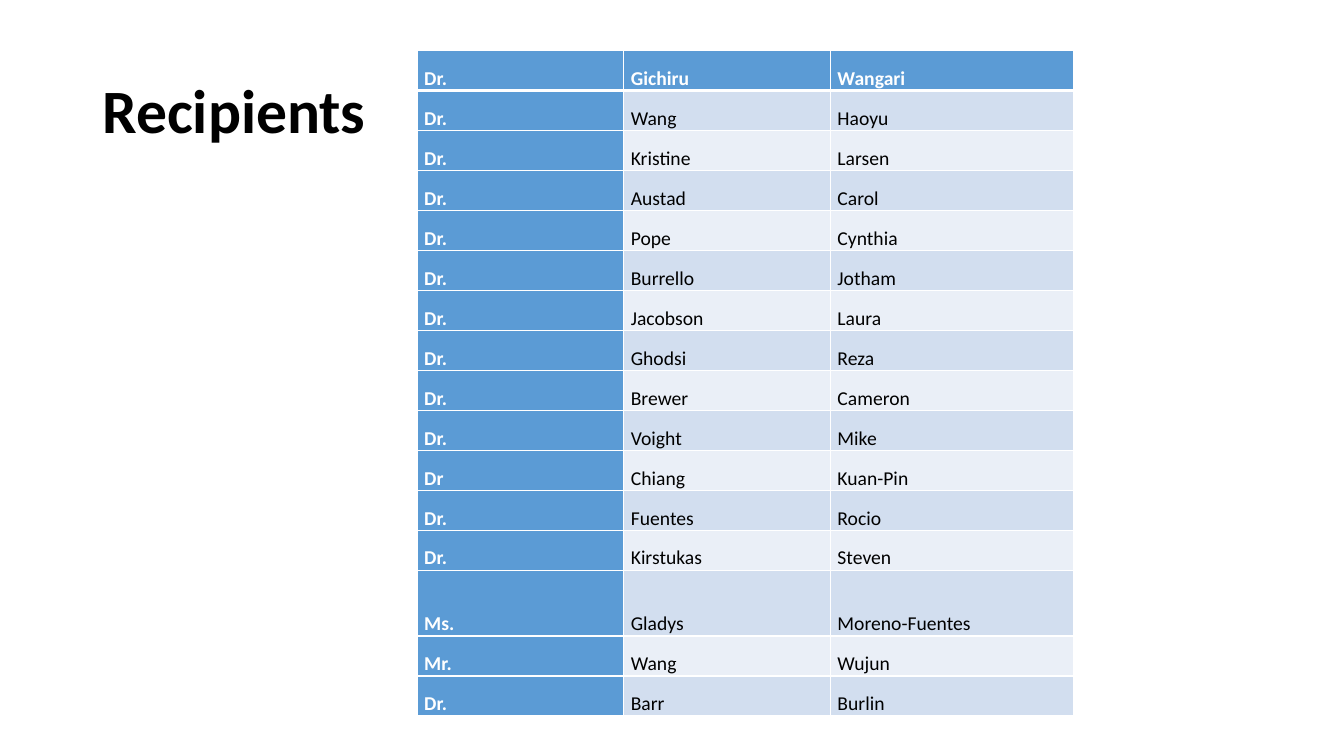
from dataclasses import dataclass

from lxml.etree import SubElement
from pptx import Presentation
from pptx.dml.color import RGBColor
from pptx.enum.text import MSO_ANCHOR, PP_ALIGN
from pptx.oxml.ns import qn
from pptx.util import Pt

# Content
TITLE = "Recipients"
PEOPLE = [
    ("Dr.", "Gichiru", "Wangari"),
    ("Dr.", "Wang", "Haoyu"),
    ("Dr.", "Kristine", "Larsen"),
    ("Dr.", "Austad", "Carol"),
    ("Dr.", "Pope", "Cynthia"),
    ("Dr.", "Burrello", "Jotham"),
    ("Dr.", "Jacobson", "Laura"),
    ("Dr.", "Ghodsi", "Reza"),
    ("Dr.", "Brewer", "Cameron"),
    ("Dr.", "Voight", "Mike"),
    ("Dr", "Chiang", "Kuan-Pin"),
    ("Dr.", "Fuentes", "Rocio"),
    ("Dr.", "Kirstukas", "Steven"),
    ("Ms.", "Gladys", "Moreno-Fuentes"),
    ("Mr.", "Wang", "Wujun"),
    ("Dr.", "Barr", "Burlin"),
]


@dataclass(frozen=True)
class Theme:
    font: str = "Calibri"
    title: int = 44
    body: int = 14
    ink: str = "000000"
    paper: str = "FFFFFF"
    accent: str = "5B9BD5"
    bands: tuple = ("EAEFF7", "D2DEEF")


THEME = Theme()

# Layout in points
TABLE_LEFT, TABLE_TOP = 298, 36.2
WIDTHS = (147.6, 147.6, 173.5)
ROW, TALL = 28.55, 47
TALL_NAME = "Gladys"
INSET = 5
THIN, THICK = 1, 3


def write(frame, text, size=THEME.body, color=THEME.ink, bold=False, spacing=None):
    para = frame.paragraphs[0]
    para.alignment = PP_ALIGN.LEFT
    para.line_spacing = spacing
    run = para.add_run()
    run.text = text
    font = run.font
    font.name, font.size, font.bold = THEME.font, Pt(size), bold
    font.color.rgb = RGBColor.from_string(color)


def border(cell, top, bottom):
    props = cell._tc.get_or_add_tcPr()
    for side, width in (("L", THIN), ("R", THIN), ("T", top), ("B", bottom)):
        line = SubElement(props, qn(f"a:ln{side}"), w=str(Pt(width)))
        fill = SubElement(line, qn("a:solidFill"))
        SubElement(fill, qn("a:srgbClr"), val=THEME.paper)


deck = Presentation()
deck.slide_width, deck.slide_height = Pt(960), Pt(540)
slide = deck.slides.add_slide(deck.slide_layouts[5])

# Title
title = slide.shapes.title
title.left, title.top, title.width, title.height = Pt(66), Pt(28.75), Pt(828), Pt(104.4)
title.text_frame.vertical_anchor = MSO_ANCHOR.MIDDLE
write(title.text_frame, TITLE, size=THEME.title, bold=True, spacing=0.9)

# Table of recipients
heights = [TALL if row[1] == TALL_NAME else ROW for row in PEOPLE]
table = slide.shapes.add_table(
    len(PEOPLE), len(WIDTHS), Pt(TABLE_LEFT), Pt(TABLE_TOP),
    Pt(sum(WIDTHS)), Pt(sum(heights))).table
for column, width in zip(table.columns, WIDTHS):
    column.width = Pt(width)

for r, row in enumerate(PEOPLE):
    table.rows[r].height = Pt(heights[r])
    for c, text in enumerate(row):
        cell = table.cell(r, c)
        head = r == 0 or c == 0
        border(cell, top=THICK if r == 1 else THIN, bottom=THICK if r == 0 else THIN)
        cell.fill.solid()
        cell.fill.fore_color.rgb = RGBColor.from_string(
            THEME.accent if head else THEME.bands[r % 2])
        cell.margin_left = cell.margin_right = Pt(INSET)
        cell.margin_top = cell.margin_bottom = 0
        cell.vertical_anchor = MSO_ANCHOR.BOTTOM
        write(cell.text_frame, text, color=THEME.paper if head else THEME.ink, bold=head)

deck.save("out.pptx")
